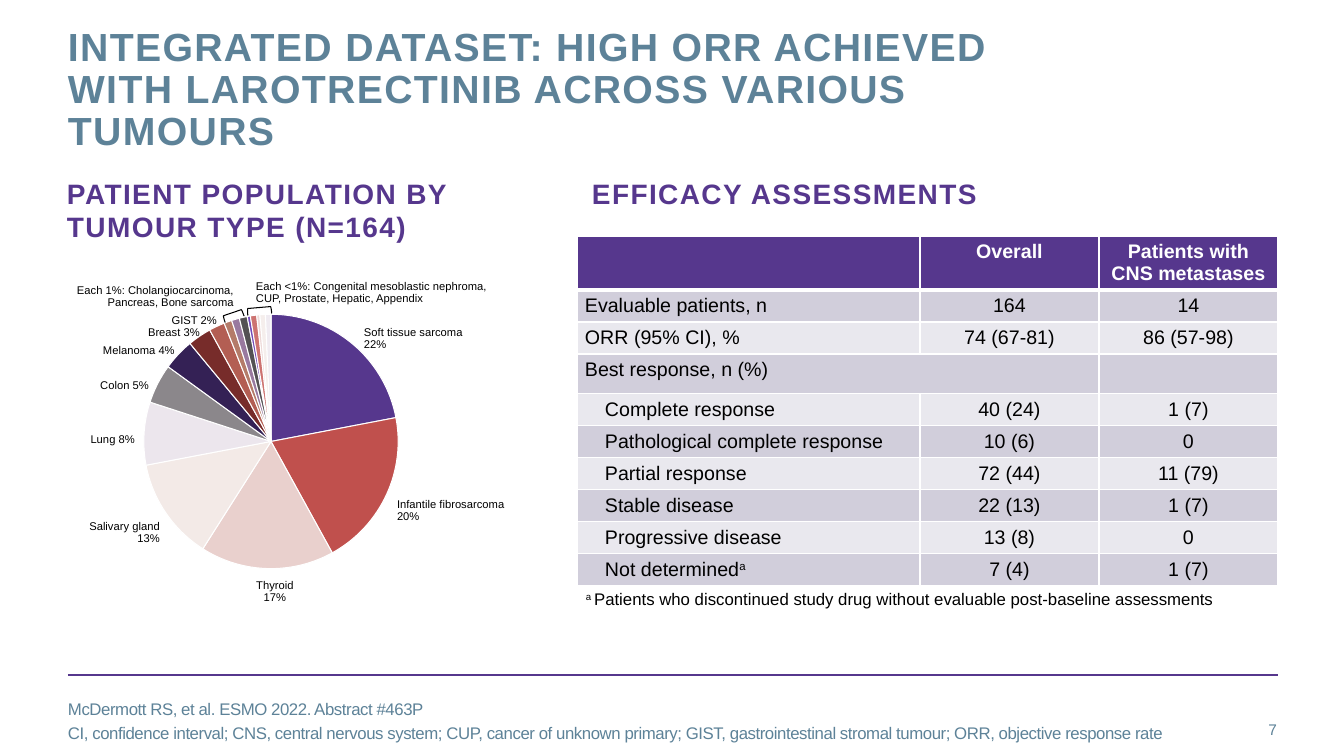
from dataclasses import dataclass
from typing import Optional

import pptx
import pptx.chart.data
import pptx.dml.color
import pptx.enum.chart
import pptx.enum.shapes
import pptx.enum.text
import pptx.oxml
import pptx.oxml.ns
import pptx.util

SLIDE_WIDTH, SLIDE_HEIGHT = 1344, 756
EMU_PER_PX = 12192000 / SLIDE_WIDTH
FONT = "Arial"
COLORS = {"purple": "56378D", "slate": "5D8298", "black": "000000", "white": "FFFFFF",
          "band_dark": "D1CEDB", "band_light": "E9E8EE"}
ALIGN = pptx.enum.text.PP_ALIGN
ANCHOR = pptx.enum.text.MSO_ANCHOR
qn = pptx.oxml.ns.qn


@dataclass
class Style:
    size: int
    color: str = "black"
    bold: bool = False
    spacing: int = 0  # hundredths of a point
    align: ALIGN = ALIGN.LEFT
    line_spacing: Optional[float] = None
    space_before: int = 0
    anchor: ANCHOR = ANCHOR.TOP
    wrap: bool = True


@dataclass
class Slice:
    tumour: str
    percent: float
    color: str


@dataclass
class Label:
    text: str
    left: int
    top: int
    width: int
    align: ALIGN = ALIGN.RIGHT


@dataclass
class Bracket:
    left: int
    top: int
    height: int
    rotation: float


@dataclass
class Row:
    label: str
    overall: str = ""
    cns: str = ""
    indented: bool = True
    note: str = ""


TITLE = Style(28, "slate", True, 100, line_spacing=pptx.util.Pt(30))
HEADING = Style(20, "purple", True, 100, line_spacing=pptx.util.Pt(24))
REFERENCES = Style(12, "slate", spacing=-30, space_before=3, anchor=ANCHOR.MIDDLE)
PAGE_NUMBER = Style(11, "slate", align=ALIGN.RIGHT, anchor=ANCHOR.MIDDLE)

SLICES = [
    Slice("Soft tissue sarcoma", 22, "56378D"), Slice("Infantile fibrosarcoma", 20, "C0504D"),
    Slice("Thyroid", 17, "E9D0CD"), Slice("Salivary gland", 13, "F3EAE7"),
    Slice("Lung", 8, "ECE6ED"), Slice("Colon", 5, "8B878B"),
    Slice("Melanoma", 4, "342155"), Slice("Breast", 3, "772C2A"),
    Slice("GIST", 2, "B35E53"), Slice("Cholangiocarcinoma", 1, "B47B69"),
    Slice("Pancreas", 1, "99799F"), Slice("Bone sarcoma", 1, "545154"),
    Slice("Congenital mesoblastic nephroma", 0.4, "724AB9"), Slice("CUP", 0.8, "CD7371"),
    Slice("Prostate", 0.4, "EDD9D7"), Slice("Hepatic", 0.7, "F5EEEC"),
    Slice("Appendix", 0.7, "F0EBF1"),
]
LABELS = [
    Label("Each <1%: Congenital mesoblastic nephroma,\vCUP, Prostate, Hepatic, Appendix",
          256, 281, 234, ALIGN.LEFT),
    Label("Soft tissue sarcoma\v22%", 364, 327, 100, ALIGN.LEFT),
    Label("Infantile fibrosarcoma\v20%", 397, 499, 109, ALIGN.LEFT),
    Label("Thyroid\v17%", 256, 580, 38, ALIGN.CENTER),
    Label("Salivary gland\v13%", 89, 521, 71),
    Label("Lung 8%", 90, 434, 45),
    Label("Colon 5%", 100, 380, 49),
    Label("Melanoma 4%", 103, 345, 72),
    Label("Breast 3%", 148, 327, 52),
    Label("GIST 2%", 171, 315, 46),
    Label("Each 1%: Cholangiocarcinoma,\vPancreas, Bone sarcoma", 76, 285, 158),
]
BRACKETS = [Bracket(256, 299, 24, 265.1), Bracket(230, 306, 20, 251.2)]
ROWS = [
    Row("", "Overall", "Patients with CNS metastases", False),
    Row("Evaluable patients, n", "164", "14", False),
    Row("ORR (95% CI), %", "74 (67-81)", "86 (57-98)", False),
    Row("Best response, n (%)", indented=False),
    Row("Complete response", "40 (24)", "1 (7)"),
    Row("Pathological complete response", "10 (6)", "0"),
    Row("Partial response", "72 (44)", "11 (79)"),
    Row("Stable disease", "22 (13)", "1 (7)"),
    Row("Progressive disease", "13 (8)", "0"),
    Row("Not determined", "7 (4)", "1 (7)", note="a"),
]
FOOTNOTE = "Patients who discontinued study drug without evaluable post-baseline assessments"


def px(length: int) -> int:
    return round(length * EMU_PER_PX)


def rgb(value: str) -> pptx.dml.color.RGBColor:
    return pptx.dml.color.RGBColor.from_string(value)


def format_paragraph(paragraph, style: Style, space_before: int = 0) -> None:
    properties = paragraph._p.get_or_add_pPr()
    properties.set("marL", "0")
    properties.set("indent", "0")
    properties.append(pptx.oxml.parse_xml(f'<a:buNone {pptx.oxml.ns.nsdecls("a")}/>'))
    paragraph.alignment = style.align
    paragraph.space_before = pptx.util.Pt(space_before)
    paragraph.line_spacing = style.line_spacing or 1.0
    for run in paragraph.runs:
        run.font.name, run.font.size, run.font.bold = FONT, pptx.util.Pt(style.size), style.bold
        run.font.color.rgb = rgb(COLORS[style.color])
        if style.spacing:
            run._r.get_or_add_rPr().set("spc", str(style.spacing))


def write(shape, text: str, style: Style, left: int, top: int, width: int, height: int) -> None:
    shape.left, shape.top, shape.width, shape.height = map(px, (left, top, width, height))
    frame = shape.text_frame
    frame.text = text
    frame.word_wrap = style.wrap
    frame.auto_size = pptx.enum.text.MSO_AUTO_SIZE.NONE
    frame.vertical_anchor = style.anchor
    frame.margin_left = frame.margin_top = frame.margin_right = frame.margin_bottom = 0
    for index, paragraph in enumerate(frame.paragraphs):
        format_paragraph(paragraph, style, style.space_before if index else 0)


def superscript(run) -> None:
    run._r.get_or_add_rPr().set("baseline", "30000")


def add_pie(slide) -> None:
    data = pptx.chart.data.CategoryChartData()
    data.categories = [item.tumour for item in SLICES]
    data.add_series("Series 1", [item.percent for item in SLICES])
    chart = slide.shapes.add_chart(pptx.enum.chart.XL_CHART_TYPE.PIE, px(59), px(300),
                                   px(424), px(283), data).chart
    chart.has_legend = chart.has_title = False
    chart.font.name, chart.font.size = "Calibri", pptx.util.Pt(10)
    chart.font.color.rgb = rgb(COLORS["black"])
    chart.plots[0].vary_by_categories = True
    for index, item in enumerate(SLICES):
        point = chart.plots[0].series[0].points[index].format
        point.fill.solid()
        point.fill.fore_color.rgb = rgb(item.color)
        point.line.color.rgb = rgb(COLORS["white"])
        point.line.width = pptx.util.Pt(0.75)
    # Fix the pie's place inside the chart
    area = chart.element.find(".//" + qn("c:plotArea"))
    for layout in area.findall(qn("c:layout")):
        area.remove(layout)
    places = "".join(f'<c:{key} val="{value}"/>' for key, value in (
        ("layoutTarget", "inner"), ("xMode", "edge"), ("yMode", "edge"),
        ("x", 0.2), ("y", 0.05), ("w", 0.6), ("h", 0.9)))
    area.insert(0, pptx.oxml.parse_xml(
        f'<c:layout {pptx.oxml.ns.nsdecls("c")}><c:manualLayout>{places}</c:manualLayout></c:layout>'))


def format_cell(cell, style: Style, fill: Optional[str], header: bool, left: int = 8) -> None:
    cell.margin_left, cell.margin_right = px(left), px(8)
    cell.margin_top, cell.margin_bottom = px(5), px(4)
    if fill:
        cell.fill.solid()
        cell.fill.fore_color.rgb = rgb(COLORS[fill])
    else:
        cell.fill.background()
    for index, side in enumerate(("lnL", "lnR", "lnT", "lnB")):
        width = pptx.util.Pt(3 if header and side == "lnB" else 1)
        cell._tc.get_or_add_tcPr().insert(index, pptx.oxml.parse_xml(
            f'<a:{side} {pptx.oxml.ns.nsdecls("a")} w="{width}"><a:solidFill>'
            f'<a:srgbClr val="{COLORS["white"]}"/></a:solidFill></a:{side}>'))
    format_paragraph(cell.text_frame.paragraphs[0], style)


def add_efficacy_table(slide) -> None:
    heights = [54] + [32] * len(ROWS)
    table = slide.shapes.add_table(len(heights), 3, px(577), px(236), px(701),
                                   px(sum(heights))).table
    for column, width in zip(table.columns, (343, 179, 179)):
        column.width = px(width)
    for table_row, height in zip(table.rows, heights):
        table_row.height = px(height)
    for index, row in enumerate(ROWS):
        header = index == 0
        fill = "purple" if header else "band_dark" if index % 2 else "band_light"
        for column, text in enumerate((row.label, row.overall, row.cns)):
            cell = table.cell(index, column)
            cell.text = text
            if column == 0 and row.note:
                note = cell.text_frame.paragraphs[0].add_run()
                note.text = row.note
                superscript(note)
            style = Style(14, "white" if header else "black", header,
                          align=ALIGN.CENTER if column else ALIGN.LEFT)
            format_cell(cell, style, fill, header, 28 if row.indented and not column else 8)
    table.cell(3, 0).merge(table.cell(3, 1))
    # Footnote row
    last = len(ROWS)
    for column in range(3):
        cell = table.cell(last, column)
        if column == 0:
            cell.text = "a "
            superscript(cell.text_frame.paragraphs[0].runs[0])
            cell.text_frame.paragraphs[0].add_run().text = FOOTNOTE
        format_cell(cell, Style(12), None, False, 9)
    table.cell(last, 0).merge(table.cell(last, 2))


def main() -> None:
    presentation = pptx.Presentation()
    presentation.slide_width, presentation.slide_height = px(SLIDE_WIDTH), px(SLIDE_HEIGHT)
    slide = presentation.slides.add_slide(presentation.slide_layouts.get_by_name("Comparison"))
    holders = {holder.placeholder_format.idx: holder for holder in slide.placeholders}

    # Title, headings and references
    write(holders[0], "INTEGRATED DATASET: HIGH ORR ACHIEVED WITH LAROTRECTINIB "
          "ACROSS VARIOUS TUMOURS", TITLE, 68, 27, 964, 89)
    write(holders[1], "PATIENT POPULATION BY\vTUMOUR TYPE (N=164)", HEADING, 67, 176, 500, 78)
    write(holders[3], "EFFICACY ASSESSMENTS", HEADING, 592, 176, 630, 78)
    write(holders[2], "McDermott RS, et al. ESMO 2022. Abstract #463P\n"
          "CI, confidence interval; CNS, central nervous system; CUP, cancer of unknown primary; "
          "GIST, gastrointestinal stromal tumour; ORR, objective response rate",
          REFERENCES, 68, 701, 1122, 40)
    holders[4].element.getparent().remove(holders[4].element)

    # Footer rule and page number
    rule = slide.shapes.add_connector(pptx.enum.shapes.MSO_CONNECTOR.STRAIGHT,
                                      px(68), px(675), px(1278), px(675))
    rule.line.color.rgb, rule.line.width = rgb(COLORS["purple"]), pptx.util.Pt(2)
    rule.element.spPr.append(pptx.oxml.parse_xml(f'<a:effectLst {pptx.oxml.ns.nsdecls("a")}/>'))
    write(slide.shapes.add_textbox(0, 0, 0, 0), "7", PAGE_NUMBER, 1190, 709, 87, 40)

    # Table, pie chart with its labels and brackets
    add_efficacy_table(slide)
    add_pie(slide)
    for label in LABELS:
        style = Style(8, align=label.align, line_spacing=0.9, wrap=False)
        write(slide.shapes.add_textbox(0, 0, 0, 0), label.text, style, label.left, label.top,
              label.width, 24 if "\v" in label.text else 12)
    for bracket in BRACKETS:
        shape = slide.shapes.add_shape(pptx.enum.shapes.MSO_SHAPE.RIGHT_BRACKET, px(bracket.left),
                                       px(bracket.top), px(7), px(bracket.height))
        shape.rotation = bracket.rotation
        shape.shadow.inherit = False
        shape.fill.background()
        shape.line.color.rgb, shape.line.width = rgb(COLORS["black"]), pptx.util.Pt(0.75)
    presentation.save("out.pptx")


if __name__ == "__main__":
    main()
